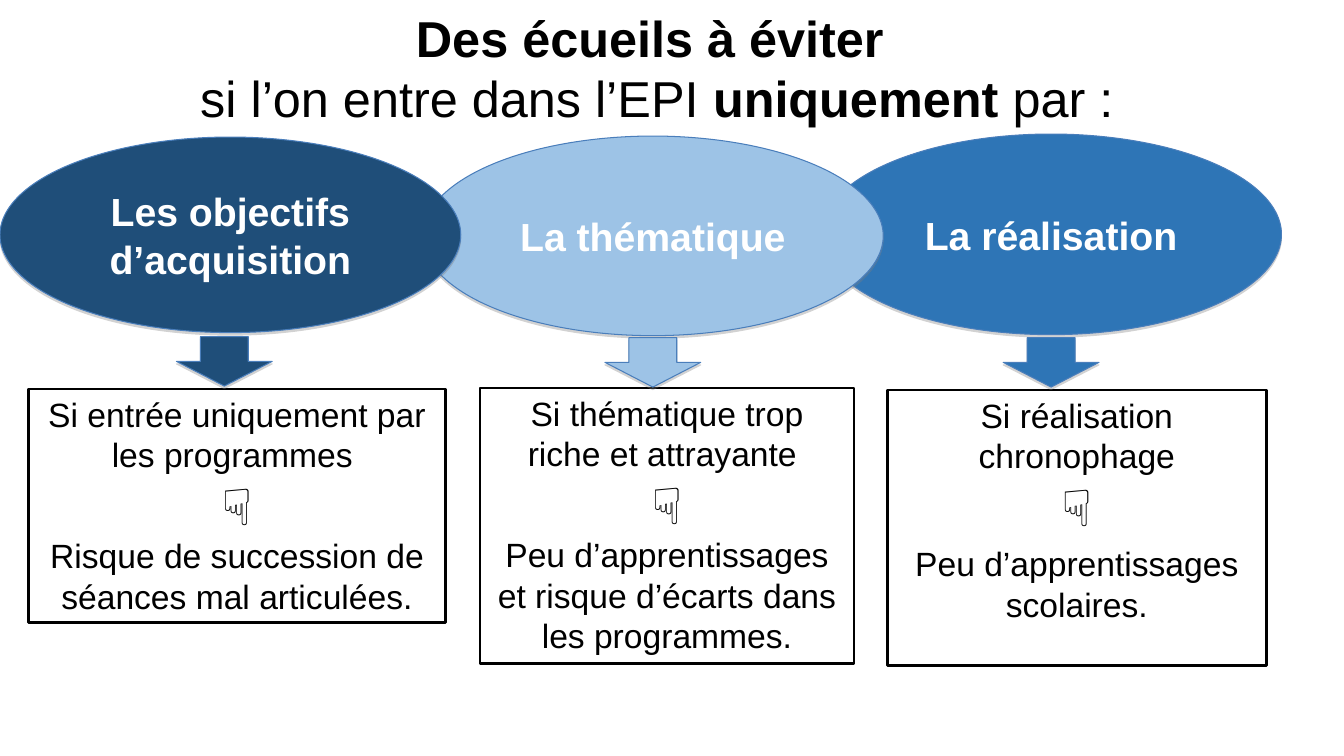
"""Builds the slide on the pitfalls of entering an EPI through a single door."""
from dataclasses import dataclass

from lxml import etree
from pptx import Presentation
from pptx import util as u
from pptx.dml.color import RGBColor
from pptx.enum import shapes, text
from pptx.oxml.ns import qn


@dataclass(frozen=True)
class Theme:
    font: str = "Arial"
    black: str = "000000"
    white: str = "FFFFFF"
    outline: str = "4A7EBB"
    shadow: str = "808080"
    navy: str = "1F4E79"
    sky: str = "9DC3E6"
    blue: str = "2E75B6"
    title: int = 36
    label: int = 28
    body: int = 24
    hand: int = 36


T = Theme()


def write(p, content, size=T.body, color=T.black, bold=False, before=0):
    """Adds one centred run to a paragraph."""
    p.alignment = text.PP_ALIGN.CENTER
    p.space_before = u.Pt(before)
    r = p.add_run()
    r.text = content
    r.font.name, r.font.size, r.font.bold = T.font, u.Pt(size), bold
    r.font.color.rgb = RGBColor.from_string(color)


def add_block(kind, box, fill, line, width, shadow=False):
    """Adds a filled, outlined shape, with a drop shadow on request."""
    sp = s.shapes.add_shape(kind, *map(u.Inches, box))
    sp.fill.solid()
    sp.fill.fore_color.rgb = RGBColor.from_string(fill)
    sp.line.color.rgb = RGBColor.from_string(line)
    sp.line.width = u.Pt(width)
    sp.shadow.inherit = False
    if shadow:
        effects = sp._element.spPr.find(qn("a:effectLst"))
        outer = etree.SubElement(effects, qn("a:outerShdw"), blurRad="0",
                                 dist=str(u.Pt(1.8)), dir="5400000", rotWithShape="0")
        tint = etree.SubElement(outer, qn("a:srgbClr"), val=T.shadow)
        etree.SubElement(tint, qn("a:alpha"), val="35000")
    return sp


prs = Presentation()
prs.slide_width, prs.slide_height = u.Inches(13.33), u.Inches(7.5)
s = prs.slides.add_slide(prs.slide_layouts[6])

tf = s.shapes.add_textbox(*map(u.Inches, (1.11, 0.02, 10.81, 1.31))).text_frame
tf.word_wrap = True
write(tf.paragraphs[0], "Des écueils à éviter ", size=T.title, bold=True)
p = tf.add_paragraph()
for content, bold in (("si l’on entre dans l’EPI ", False), ("uniquement ", True), ("par :", False)):
    write(p, content, size=T.title, bold=bold)

entries = [
    ("La réalisation", T.blue, (8.14, 1.33, 4.57, 1.99), (9.95, 3.35), (8.8, 3.87, 3.76, 2.73),
     "Si réalisation chronophage", "Peu d’apprentissages scolaires.", 5),
    ("La thématique", T.sky, (4.19, 1.35, 4.57, 1.98), (6, 3.35), (4.76, 3.85, 3.71, 2.73),
     "Si thématique trop riche et attrayante ",
     "Peu d’apprentissages et risque d’écarts dans les programmes.", 0),
    ("Les objectifs d’acquisition", T.navy, (0, 1.36, 4.57, 1.94), (1.75, 3.34), (0.28, 3.86, 4.14, 2.32),
     "Si entrée uniquement par les programmes ",
     "Risque de succession de séances mal articulées.", 0),
]

for label, color, oval, arrow, box, cause, risk, before in entries:
    sp = add_block(shapes.MSO_SHAPE.OVAL, oval, color, T.outline, 0.75, shadow=True)
    sp.text_frame.vertical_anchor = text.MSO_ANCHOR.MIDDLE
    write(sp.text_frame.paragraphs[0], label, size=T.label, color=T.white, bold=True)

    tf = add_block(shapes.MSO_SHAPE.RECTANGLE, box, T.white, T.black, 2).text_frame
    tf.word_wrap = True
    tf.vertical_anchor = text.MSO_ANCHOR.TOP
    write(tf.paragraphs[0], cause)
    write(tf.add_paragraph(), "☟", size=T.hand)
    write(tf.add_paragraph(), risk, before=before)

    add_block(shapes.MSO_SHAPE.DOWN_ARROW, (*arrow, 0.95, 0.49), color, T.outline, 0.75, shadow=True)

prs.save("out.pptx")
